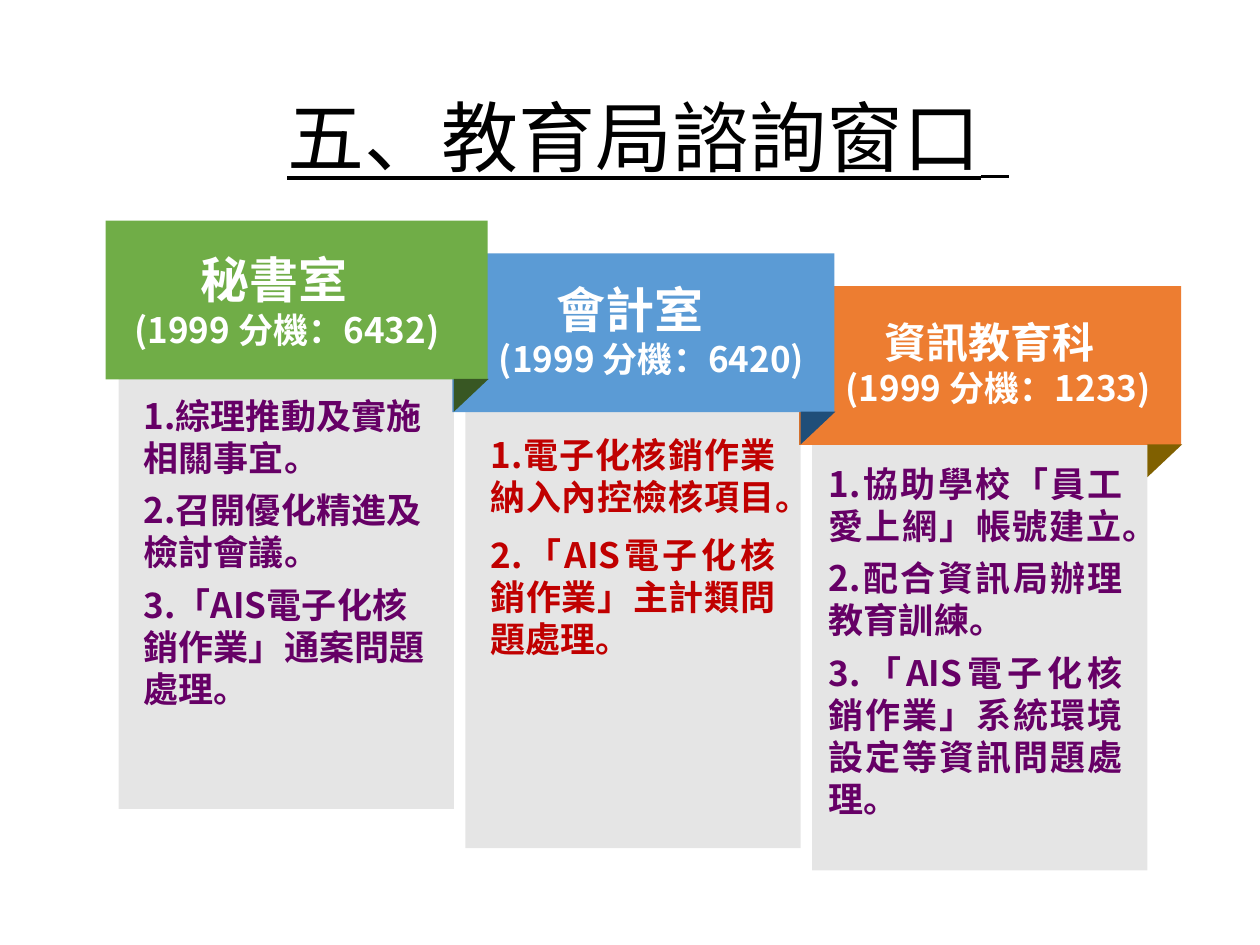
from dataclasses import dataclass

from lxml import etree
from pptx import Presentation
from pptx.dml.color import RGBColor
from pptx.enum.shapes import MSO_SHAPE
from pptx.enum.text import MSO_ANCHOR, PP_ALIGN
from pptx.oxml.ns import qn
from pptx.util import Cm, Pt

RECTANGLE = MSO_SHAPE.RECTANGLE
TRIANGLE = MSO_SHAPE.RIGHT_TRIANGLE
MIDDLE, TOP = MSO_ANCHOR.MIDDLE, MSO_ANCHOR.TOP
LEFT, CENTER, JUSTIFY = PP_ALIGN.LEFT, PP_ALIGN.CENTER, PP_ALIGN.JUSTIFY

FONT = "Noto Sans CJK SC"
BLACK = RGBColor(0x00, 0x00, 0x00)
WHITE = RGBColor(0xFF, 0xFF, 0xFF)
PURPLE = RGBColor(0x66, 0x00, 0x66)
RED = RGBColor(0xC0, 0x00, 0x00)
GREEN = RGBColor(0x70, 0xAD, 0x47)
DARK_GREEN = RGBColor(0x38, 0x57, 0x23)
BLUE = RGBColor(0x5B, 0x9B, 0xD5)
DARK_BLUE = RGBColor(0x1F, 0x4E, 0x79)
ORANGE = RGBColor(0xED, 0x7D, 0x31)
DARK_GOLD = RGBColor(0x80, 0x60, 0x00)

COLUMN_STEP = 6.99
ROW_STEP = 0.66


@dataclass(frozen=True)
class Office:
    name: str
    name_size: int
    name_indent: float
    extension: str
    extension_indent: float
    line_spacing: float
    color: RGBColor
    fold_color: RGBColor
    panel_top: float
    duties: tuple[str, ...]
    duty_color: RGBColor
    duty_align: PP_ALIGN
    space_before: int
    own_text_box: bool = False


OFFICES = (
    Office("秘書室", 28, 1.92, "(1999 分機：6432)", 0.58, 1.0,
           GREEN, DARK_GREEN, 7.19,
           ("1.綜理推動及實施相關事宜。",
            "2.召開優化精進及檢討會議。",
            "3.「AIS電子化核銷作業」通案問題處理。"),
           PURPLE, LEFT, 6),
    Office("會計室", 28, 2.1, "(1999 分機：6420)", 0.94, 0.9,
           BLUE, DARK_BLUE, 7.98,
           ("1.電子化核銷作業納入內控檢核項目。",
            "2.「AIS電子化核銷作業」主計類問題處理。"),
           RED, JUSTIFY, 9),
    Office("資訊教育科", 24, 1.72, "(1999 分機：1233)", 0.94, 0.9,
           ORANGE, DARK_GOLD, 8.43,
           ("1.協助學校「員工愛上網」帳號建立。",
            "2.配合資訊局辦理教育訓練。",
            "3.「AIS電子化核銷作業」系統環境設定等資訊問題處理。"),
           PURPLE, JUSTIFY, 6, own_text_box=True),
)


def style_paragraph(paragraph, size: int, color: RGBColor, bold: bool = True) -> None:
    font = paragraph.font
    font.name, font.size, font.bold = FONT, Pt(size), bold
    font.color.rgb = color
    properties = paragraph._p.get_or_add_pPr().get_or_add_defRPr()
    etree.SubElement(properties, qn("a:ea"), typeface=FONT)


def set_frame(shape, anchor, left: float, top: float, right: float, bottom: float):
    """Wrap the text and set its anchor and insets in centimetres."""
    frame = shape.text_frame
    frame.word_wrap = True
    frame.vertical_anchor = anchor
    frame.margin_left, frame.margin_top = Cm(left), Cm(top)
    frame.margin_right, frame.margin_bottom = Cm(right), Cm(bottom)
    return frame


def add_block(slide, kind, left: float, top: float, width: float, height: float,
              color: RGBColor, opacity: int = 100):
    shape = slide.shapes.add_shape(kind, Cm(left), Cm(top), Cm(width), Cm(height))
    shape.shadow.inherit = False
    shape.line.fill.background()
    shape.fill.solid()
    shape.fill.fore_color.rgb = color
    if opacity < 100:
        color_element = shape._element.spPr.find(f"{qn('a:solidFill')}/{qn('a:srgbClr')}")
        etree.SubElement(color_element, qn("a:alpha"), val=str(opacity * 1000))
    return shape


def add_panel(slide, office: Office, column: int) -> None:
    panel = add_block(slide, RECTANGLE, 2.39 + column * COLUMN_STEP, office.panel_top,
                      6.76, 9.12, BLACK, opacity=10)
    if not office.own_text_box:
        write_duties(set_frame(panel, TOP, 0.51, 0.76, 0.51, 0.51), office)


def write_duties(frame, office: Office) -> None:
    frame.text = "\n".join(office.duties)
    for paragraph in frame.paragraphs:
        paragraph.alignment = office.duty_align
        paragraph.space_before = Pt(office.space_before)
        style_paragraph(paragraph, 20, office.duty_color)


def add_header(slide, office: Office, column: int) -> None:
    header = add_block(slide, RECTANGLE, 2.13 + column * COLUMN_STEP,
                       4.45 + column * ROW_STEP, 7.7, 3.2, office.color)
    frame = set_frame(header, MIDDLE, 0, 0, 0, 0)
    frame.text = f"{office.name}\n{office.extension}"
    sizes = (office.name_size, 20)
    indents = (office.name_indent, office.extension_indent)
    for paragraph, size, indent in zip(frame.paragraphs, sizes, indents):
        paragraph.alignment = LEFT
        paragraph.line_spacing = office.line_spacing
        if office.line_spacing < 1:
            paragraph.space_after = Pt(2)
        paragraph._p.get_or_add_pPr().set("marL", str(Cm(indent)))
        style_paragraph(paragraph, size, WHITE)


def add_fold(slide, office: Office, column: int) -> None:
    fold = add_block(slide, TRIANGLE, 9.17 + column * COLUMN_STEP,
                     7.62 + column * ROW_STEP, 0.66, 0.7, office.fold_color)
    fold.rotation = 90


def add_title(slide) -> None:
    box = slide.shapes.add_textbox(Cm(1.27), Cm(1.02), Cm(23.6), Cm(3.68))
    paragraph = set_frame(box, MIDDLE, 0.25, 0.13, 0.25, 0.13).paragraphs[0]
    paragraph.alignment = CENTER
    paragraph.line_spacing = 0.9
    style_paragraph(paragraph, 44, BLACK, bold=False)
    paragraph.font.underline = True
    for text, size in (("五、教育局諮詢窗口", 44), ("  ", 36)):
        run = paragraph.add_run()
        run.text = text
        run.font.size = Pt(size)


def main() -> None:
    presentation = Presentation()
    presentation.slide_width, presentation.slide_height = Cm(25.4), Cm(19.05)
    slide = presentation.slides.add_slide(presentation.slide_layouts[6])

    columns = list(enumerate(OFFICES))
    for column, office in reversed(columns):
        add_panel(slide, office, column)
        add_header(slide, office, column)
    for column, office in columns:
        add_fold(slide, office, column)
        if office.own_text_box:
            box = slide.shapes.add_textbox(Cm(16.46), Cm(9.19), Cm(6.43), Cm(7.52))
            write_duties(set_frame(box, TOP, 0.25, 0.13, 0.25, 0.13), office)
    add_title(slide)

    presentation.save("out.pptx")


if __name__ == "__main__":
    main()
